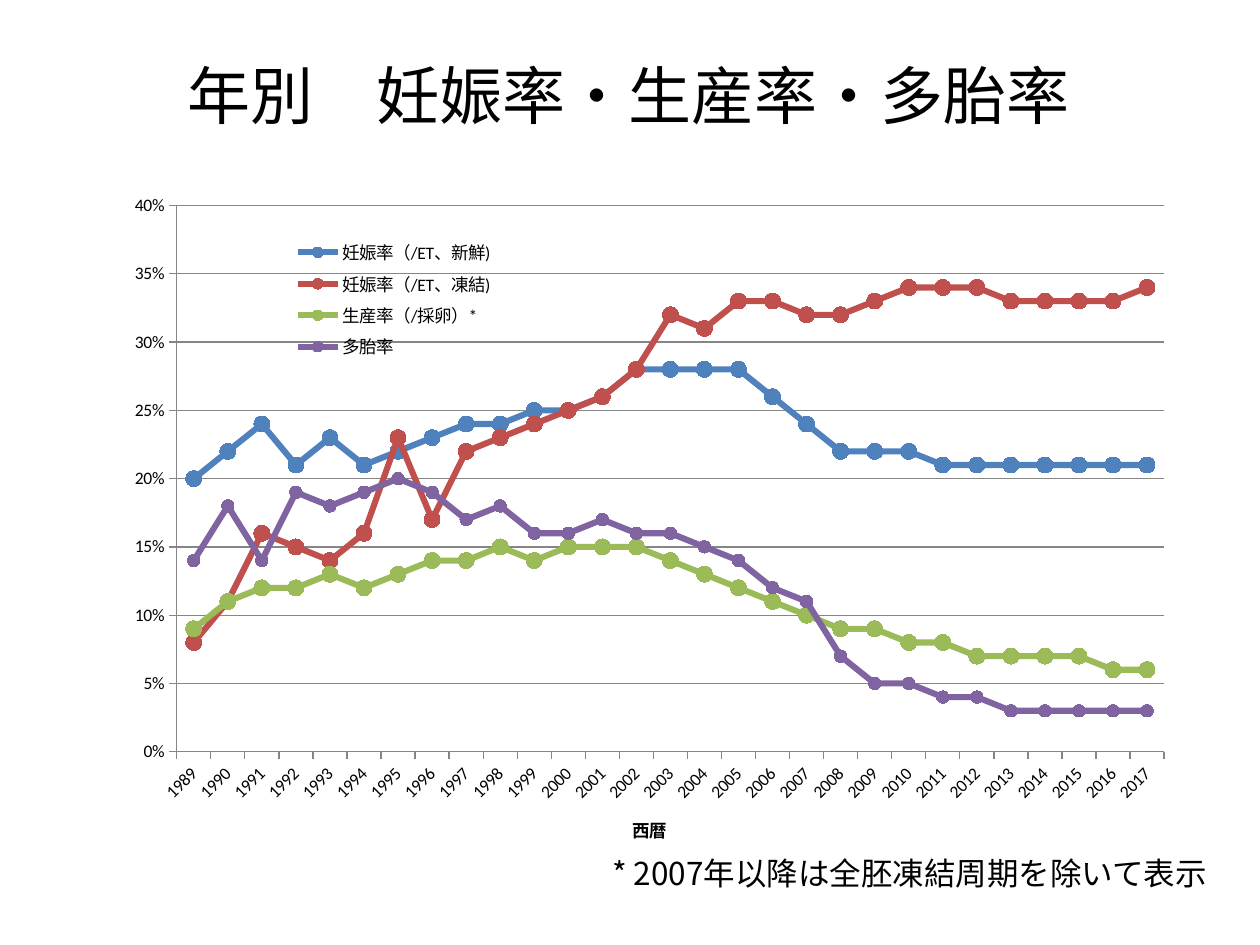
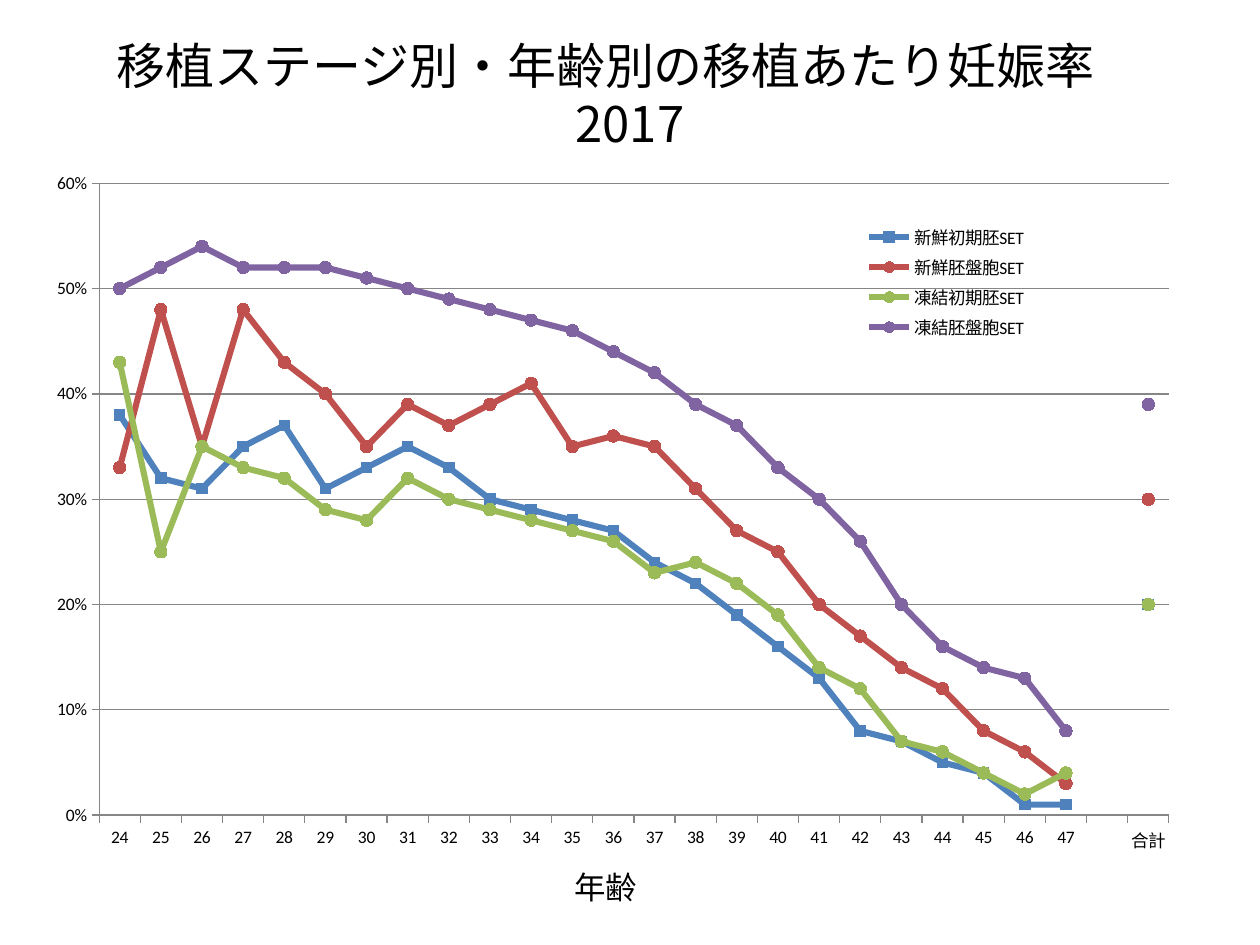
"""Builds two slides of line charts on pregnancy, birth and multiple-birth rates."""
from lxml import etree
from pptx import Presentation
from pptx.chart.data import CategoryChartData
from pptx.dml.color import RGBColor
from pptx.enum.chart import XL_CHART_TYPE, XL_LEGEND_POSITION, XL_MARKER_STYLE, XL_TICK_MARK
from pptx.enum.text import MSO_ANCHOR, MSO_AUTO_SIZE, PP_ALIGN
from pptx.oxml.ns import qn
from pptx.util import Inches, Pt

LINE_CHART = XL_CHART_TYPE.LINE_MARKERS
LEGEND_RIGHT = XL_LEGEND_POSITION.RIGHT
CIRCLE = XL_MARKER_STYLE.CIRCLE
SQUARE = XL_MARKER_STYLE.SQUARE
TICK_OUT = XL_TICK_MARK.OUTSIDE
MIDDLE = MSO_ANCHOR.MIDDLE
NO_AUTOSIZE = MSO_AUTO_SIZE.NONE
GROW = MSO_AUTO_SIZE.SHAPE_TO_FIT_TEXT
CENTER = PP_ALIGN.CENTER
LEFT = PP_ALIGN.LEFT

COLORS = {
    "text": "000000",
    "background": "FFFFFF",
    "grid": "868686",
    "blue": "4F81BD",
    "red": "C0504D",
    "green": "9BBB59",
    "purple": "8064A2",
}
SERIES_COLORS = ("blue", "red", "green", "purple")
JAPANESE_FONT = "Noto Sans CJK JP"
CHART_FONT = "Calibri"
LATIN_FONT = "Arial"

YEARS = [str(year) for year in range(1989, 2018)]
YEARLY_RATES = {
    "妊娠率（/ET、新鮮)": [20, 22, 24, 21, 23, 21, 22, 23, 24, 24, 25, 25, 26, 28, 28,
                     28, 28, 26, 24, 22, 22, 22, 21, 21, 21, 21, 21, 21, 21],
    "妊娠率（/ET、凍結)": [8, 11, 16, 15, 14, 16, 23, 17, 22, 23, 24, 25, 26, 28, 32,
                     31, 33, 33, 32, 32, 33, 34, 34, 34, 33, 33, 33, 33, 34],
    "生産率（/採卵）*": [9, 11, 12, 12, 13, 12, 13, 14, 14, 15, 14, 15, 15, 15, 14,
                   13, 12, 11, 10, 9, 9, 8, 8, 7, 7, 7, 7, 6, 6],
    "多胎率": [14, 18, 14, 19, 18, 19, 20, 19, 17, 18, 16, 16, 17, 16, 16,
            15, 14, 12, 11, 7, 5, 5, 4, 4, 3, 3, 3, 3, 3],
}
YEARLY_MARKERS = [(CIRCLE, 9), (CIRCLE, 9), (CIRCLE, 9), (CIRCLE, 7)]

AGES = [str(age) for age in range(24, 48)] + ["", "合計"]
AGE_RATES = {
    "新鮮初期胚SET": [38, 32, 31, 35, 37, 31, 33, 35, 33, 30, 29, 28, 27,
                 24, 22, 19, 16, 13, 8, 7, 5, 4, 1, 1, None, 20],
    "新鮮胚盤胞SET": [33, 48, 35, 48, 43, 40, 35, 39, 37, 39, 41, 35, 36,
                 35, 31, 27, 25, 20, 17, 14, 12, 8, 6, 3, None, 30],
    "凍結初期胚SET": [43, 25, 35, 33, 32, 29, 28, 32, 30, 29, 28, 27, 26,
                 23, 24, 22, 19, 14, 12, 7, 6, 4, 2, 4, None, 20],
    "凍結胚盤胞SET": [50, 52, 54, 52, 52, 52, 51, 50, 49, 48, 47, 46, 44,
                 42, 39, 37, 33, 30, 26, 20, 16, 14, 13, 8, None, 39],
}
AGE_MARKERS = [(SQUARE, 6), (CIRCLE, 7), (CIRCLE, 7), (CIRCLE, 7)]


def rgb(name):
    """Return the named colour."""
    return RGBColor.from_string(COLORS[name])


def format_font(font, size, name, bold=False):
    """Apply the shared text style to a font."""
    font.size = Pt(size)
    font.name = name
    font.bold = bold
    font.color.rgb = rgb("text")


def write_text(text_frame, text, size=18, font=JAPANESE_FONT, bold=False, align=LEFT):
    """Write one formatted paragraph into a text frame."""
    paragraph = text_frame.paragraphs[0]
    paragraph.alignment = align
    run = paragraph.add_run()
    run.text = text
    format_font(run.font, size, font, bold)
    properties = run.font._element if hasattr(run.font, "_element") else run._r.get_or_add_rPr()
    latin = properties.find(qn("a:latin"))
    east_asian = etree.Element(qn("a:ea"), typeface=font)
    latin.addnext(east_asian)


def set_layout(element, index, box, inner=False):
    """Place a plot area or legend by fractions of the chart."""
    for old_layout in element.findall(qn("c:layout")):
        element.remove(old_layout)
    layout = etree.Element(qn("c:layout"))
    manual = etree.SubElement(layout, qn("c:manualLayout"))
    settings = [("layoutTarget", "inner")] if inner else []
    settings += [("xMode", "edge"), ("yMode", "edge")]
    settings += zip("xywh", box)
    for tag, value in settings:
        etree.SubElement(manual, qn(f"c:{tag}"), val=str(value))
    element.insert(index, layout)


class Deck:
    """Holds the shared style and the current slide."""

    def __init__(self):
        """Start an empty presentation."""
        self.presentation = Presentation()
        self.presentation.slide_width = Inches(10)
        self.presentation.slide_height = Inches(7.5)
        self.slide = None

    def add_slide(self, title, left, width, size):
        """Add a slide with a centred title."""
        self.slide = self.presentation.slides.add_slide(self.presentation.slide_layouts[5])
        self.slide.background.fill.solid()
        self.slide.background.fill.fore_color.rgb = rgb("background")
        shape = self.slide.shapes.title
        shape.left, shape.top = Inches(left), Inches(0.29)
        shape.width, shape.height = Inches(width), Inches(0.91)
        text_frame = shape.text_frame
        text_frame.auto_size = NO_AUTOSIZE
        text_frame.word_wrap = True
        text_frame.vertical_anchor = MIDDLE
        text_frame.margin_left = text_frame.margin_right = Inches(0.2)
        write_text(text_frame, title, size=size, align=CENTER)

    def add_note(self, text, left, top, width, **text_format):
        """Add a single line of text that does not wrap."""
        shape = self.slide.shapes.add_textbox(
            Inches(left), Inches(top), Inches(width), Inches(0.4))
        shape.text_frame.word_wrap = False
        shape.text_frame.auto_size = GROW
        write_text(shape.text_frame, text, **text_format)

    def add_rate_chart(self, categories, rates, markers, maximum, step, plot_box, legend_box,
                       axis_title=None, label_angle=0):
        """Add a line chart of percentages with a legend over the plot."""
        data = CategoryChartData(number_format="0%")
        data.categories = categories
        for name, percents in rates.items():
            data.add_series(name, [None if percent is None else percent / 100
                                   for percent in percents])
        chart = self.slide.shapes.add_chart(
            LINE_CHART, Inches(0.33), Inches(1.3), Inches(9.33), Inches(5.53), data).chart
        format_font(chart.font, 10, CHART_FONT)
        chart.has_title = False
        chart.plots[0].vary_by_categories = False
        for series, color, marker in zip(chart.plots[0].series, SERIES_COLORS, markers):
            self.format_series(series, color, *marker)
        self.format_axes(chart, maximum, step, axis_title, label_angle)
        chart.has_legend = True
        chart.legend.position = LEGEND_RIGHT
        chart.legend.include_in_layout = False
        chart_element = chart.element.find(qn("c:chart"))
        set_layout(chart_element.find(qn("c:plotArea")), 0, plot_box, inner=True)
        set_layout(chart_element.find(qn("c:legend")), 1, legend_box)

    def format_series(self, series, color, marker_style, marker_size):
        """Colour a series line and its markers."""
        series.smooth = False
        series.format.line.width = Pt(3.5)
        series.format.line.color.rgb = rgb(color)
        series.marker.style = marker_style
        series.marker.size = marker_size
        series.marker.format.fill.solid()
        series.marker.format.fill.fore_color.rgb = rgb(color)
        series.marker.format.line.color.rgb = rgb(color)

    def format_axes(self, chart, maximum, step, axis_title, label_angle):
        """Set the scales, lines, ticks and labels of both axes."""
        category_axis, value_axis = chart.category_axis, chart.value_axis
        for axis in (category_axis, value_axis):
            axis.major_tick_mark = TICK_OUT
            axis.format.line.color.rgb = rgb("grid")
            format_font(axis.tick_labels.font, 10, CHART_FONT)
        value_axis.minimum_scale = 0
        value_axis.maximum_scale = maximum
        value_axis.major_unit = step
        value_axis.tick_labels.number_format = "0%"
        value_axis.tick_labels.number_format_is_linked = False
        value_axis.has_major_gridlines = True
        value_axis.major_gridlines.format.line.color.rgb = rgb("grid")
        category_axis.has_major_gridlines = False
        category_axis.has_title = axis_title is not None
        if axis_title:
            write_text(category_axis.axis_title.text_frame, axis_title,
                       size=10, font=CHART_FONT, bold=True)
        label_body = chart.element.find(f".//{qn('c:catAx')}/{qn('c:txPr')}/{qn('a:bodyPr')}")
        label_body.set("rot", str(label_angle * 60000))


def main():
    """Build both slides and save the file."""
    deck = Deck()
    deck.add_slide("年別　妊娠率・生産率・多胎率", left=0.49, width=9, size=36)
    deck.add_note("* 2007年以降は全胚凍結周期を除いて表示", 4.76, 6.73, 4.99)
    deck.add_rate_chart(YEARS, YEARLY_RATES, YEARLY_MARKERS, maximum=0.4, step=0.05,
                        plot_box=(0.115, 0.06, 0.84, 0.784),
                        legend_box=(0.19, 0.1, 0.22, 0.19),
                        axis_title="西暦", label_angle=-45)

    deck.add_slide("移植ステージ別・年齢別の移植あたり妊娠率　2017", left=0.37, width=9.26, size=28)
    deck.add_note("年齢", 4.46, 6.84, 0.71, font=LATIN_FONT)
    deck.add_rate_chart(AGES, AGE_RATES, AGE_MARKERS, maximum=0.6, step=0.1,
                        plot_box=(0.049, 0.028, 0.91, 0.907),
                        legend_box=(0.68, 0.08, 0.18, 0.18))
    deck.presentation.save("out.pptx")


if __name__ == "__main__":
    main()
